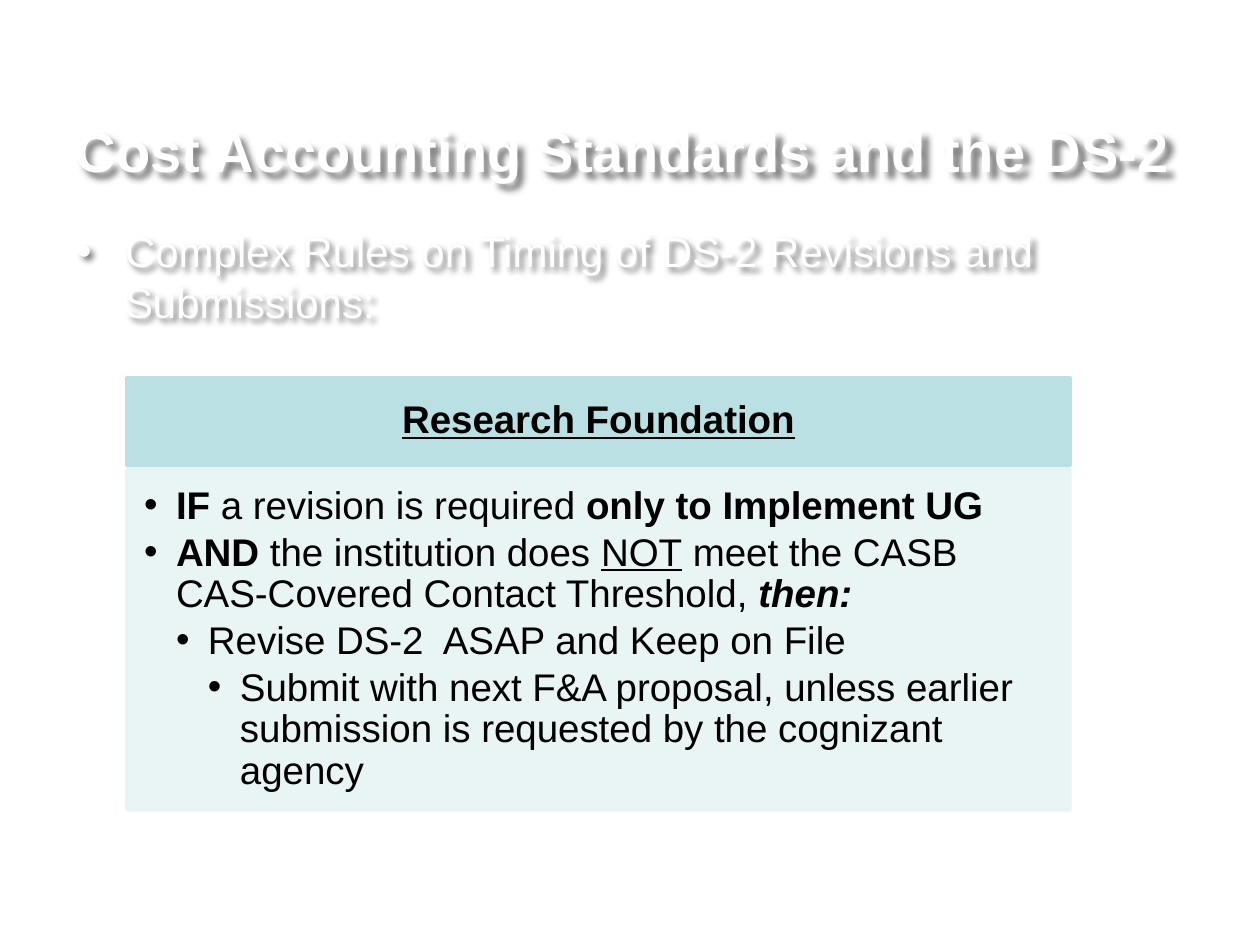
from dataclasses import dataclass

from lxml.etree import SubElement
from pptx import Presentation
from pptx.dml.color import RGBColor
from pptx.enum.shapes import MSO_SHAPE
from pptx.enum.text import MSO_ANCHOR, PP_ALIGN
from pptx.oxml.ns import qn
from pptx.util import Emu, Pt

PX = 914400 // 126
FONT = "Arial"
WHITE, BLACK = "FFFFFF", "000000"
HEADER_FILL, PANEL_FILL = "BBE0E3", "E7F3F4"


@dataclass(frozen=True)
class Box:
    left: int
    top: int
    width: int
    height: int

    def emu(self) -> list[Emu]:
        return [px(n) for n in (self.left, self.top, self.width, self.height)]


@dataclass(frozen=True)
class Span:
    text: str
    bold: bool = False
    italic: bool = False
    underline: bool = False


@dataclass(frozen=True)
class Item:
    spans: tuple[Span, ...]
    level: int = 0
    indent: int = 0  # hanging width of the bullet in px, 0 for no bullet


def px(length: int) -> Emu:
    return Emu(length * PX)


def color(value: str) -> RGBColor:
    return RGBColor.from_string(value)


def add_bullet(paragraph, left: int, hanging: int) -> None:
    properties = paragraph._p.get_or_add_pPr()
    properties.set("marL", str(px(left)))
    properties.set("indent", str(-px(hanging)))
    SubElement(properties, qn("a:buFont"), typeface=FONT)
    SubElement(properties, qn("a:buChar"), char="•")


def add_text(shape, items: list[Item], size: int, ink: str, align=PP_ALIGN.LEFT,
             anchor=MSO_ANCHOR.TOP, line_spacing: float = 1.0, after: int = 0,
             insets: tuple[int, int, int, int] = (13, 6, 13, 6)) -> None:
    frame = shape.text_frame
    frame.word_wrap = True
    frame.vertical_anchor = anchor
    frame.margin_left, frame.margin_top, frame.margin_right, frame.margin_bottom = map(px, insets)
    for number, item in enumerate(items):
        paragraph = frame.add_paragraph() if number else frame.paragraphs[0]
        if item.indent:
            add_bullet(paragraph, item.indent * (item.level + 1), item.indent)
        paragraph.level = item.level
        paragraph.alignment = align
        paragraph.line_spacing = line_spacing
        paragraph.space_after = Pt(after)
        for span in item.spans:
            run = paragraph.add_run()
            run.text = span.text
            font = run.font
            font.name, font.size = FONT, Pt(size)
            font.bold, font.italic, font.underline = span.bold, span.italic, span.underline
            font.color.rgb = color(ink)


def add_shadow(shape) -> None:
    shape.shadow.inherit = False
    effects = shape._element.spPr.find(qn("a:effectLst"))
    shadow = SubElement(effects, qn("a:outerShdw"), blurRad=str(px(6)), dist=str(px(7)),
                        dir="2700000", algn="tl", rotWithShape="0")
    black = SubElement(shadow, qn("a:srgbClr"), val=BLACK)
    SubElement(black, qn("a:alpha"), val="50000")


def add_shadowed_text(slide, box: Box, items: list[Item], size: int, **layout) -> None:
    shape = slide.shapes.add_textbox(*box.emu())
    add_shadow(shape)
    add_text(shape, items, size, WHITE, **layout)


def add_panel(slide, box: Box, fill: str, opacity: int = 100):
    shape = slide.shapes.add_shape(MSO_SHAPE.RECTANGLE, *box.emu())
    shape.shadow.inherit = False
    shape.fill.solid()
    shape.fill.fore_color.rgb = color(fill)
    shape.line.color.rgb = color(fill)
    shape.line.width = Pt(2)
    if opacity < 100:
        for element in shape._element.spPr.iter(qn("a:srgbClr")):
            SubElement(element, qn("a:alpha"), val=str(opacity * 1000))
    return shape


def main() -> None:
    presentation = Presentation()
    presentation.slide_width, presentation.slide_height = px(1260), px(945)
    slide = presentation.slides.add_slide(presentation.slide_layouts[6])

    # Title and lead bullet
    add_shadowed_text(slide, Box(44, 105, 1158, 91),
                      [Item((Span("Cost Accounting Standards and the DS-2", bold=True),))],
                      32, align=PP_ALIGN.CENTER, anchor=MSO_ANCHOR.MIDDLE)
    add_shadowed_text(slide, Box(64, 220, 1070, 620),
                      [Item((Span("Complex Rules on Timing of DS-2 Revisions and Submissions:"),),
                            indent=48)], 24)

    # Card header
    header = add_panel(slide, Box(127, 378, 943, 87), HEADER_FILL)
    add_text(header, [Item((Span("Research Foundation", bold=True, underline=True),))],
             22, BLACK, align=PP_ALIGN.CENTER, anchor=MSO_ANCHOR.MIDDLE, line_spacing=0.9)

    # Card rules
    rules = [
        Item((Span("IF", bold=True), Span(" a revision is required "),
              Span("only to Implement UG", bold=True)), indent=32),
        Item((Span("AND ", bold=True), Span("the institution does "),
              Span("NOT", underline=True),
              Span(" meet the CASB CAS-Covered Contact Threshold, "),
              Span("then:", bold=True, italic=True)), indent=32),
        Item((Span("Revise DS-2  ASAP and Keep on File"),), level=1, indent=32),
        Item((Span("Submit with next F&A proposal, unless earlier submission is "
                   "requested by the cognizant agency"),), level=2, indent=32),
    ]
    panel = add_panel(slide, Box(127, 469, 943, 341), PANEL_FILL, opacity=90)
    add_text(panel, rules, 22, BLACK, line_spacing=0.9, after=3, insets=(17, 17, 22, 24))

    presentation.save("out.pptx")


if __name__ == "__main__":
    main()
